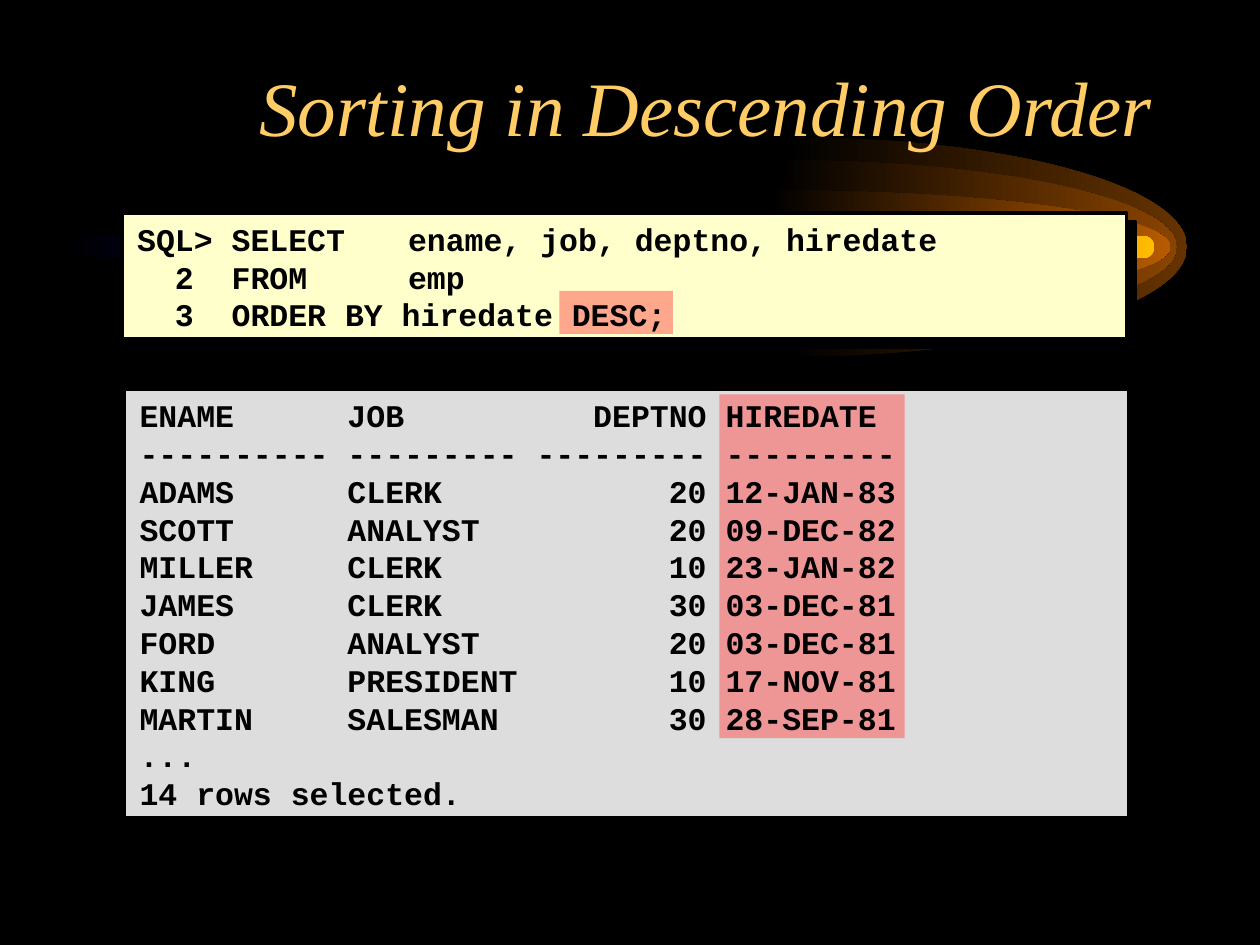
from dataclasses import dataclass

from lxml.etree import SubElement
from pptx import Presentation
from pptx.dml.color import RGBColor as Rgb
from pptx.enum.shapes import MSO_SHAPE as Shape
from pptx.enum.text import MSO_ANCHOR as Anchor, PP_ALIGN as Align
from pptx.oxml.ns import qn
from pptx.util import Inches, Pt


@dataclass(frozen=True)
class Theme:
    """Colours, fonts and type sizes of the slide."""
    black: str = "000000"
    title: str = "FFCC66"
    query: str = "FFFFCC"
    result: str = "DDDDDD"
    highlight: str = "FF5050"
    serif: str = "Times New Roman"
    mono: str = "Courier New"
    title_size: float = 44
    code_size: float = 18
    code_pitch: float = 21.6


THEME = Theme()
GLOWS = [(6.29, 0.87, "663300"), (6.21, 0.69, "894400"), (6.16, 0.45, "B75B00")]
COMET = [(0, "000000"), (20, "000040"), (50, "400040"),
         (75, "8F0040"), (90, "F27300"), (100, "FFBF00")]
QUERY = ["SQL> SELECT  \t ename, job, deptno, hiredate",
         "  2  FROM    \t emp",
         "  3  ORDER BY hiredate DESC;"]
HEADER = "ENAME      JOB          DEPTNO HIREDATE"
RULE = "---------- --------- --------- ---------"
ROWS = [("ADAMS", "CLERK", 20, "12-JAN-83"),
        ("SCOTT", "ANALYST", 20, "09-DEC-82"),
        ("MILLER", "CLERK", 10, "23-JAN-82"),
        ("JAMES", "CLERK", 30, "03-DEC-81"),
        ("FORD", "ANALYST", 20, "03-DEC-81"),
        ("KING", "PRESIDENT", 10, "17-NOV-81"),
        ("MARTIN", "SALESMAN", 30, "28-SEP-81")]


def add_span(para, text, *, font, size, color, bold=False, italic=False, shadow=False):
    """Add formatted text to a paragraph."""
    span = para.add_run()
    span.text = text
    span.font.size = Pt(size)
    span.font.bold, span.font.italic = bold, italic
    span.font.color.rgb = Rgb.from_string(color)
    if shadow:
        add_shadow(SubElement(span.font._element, qn("a:effectLst")), 3)
    span.font.name = font


def add_shadow(effects, distance):
    """Add a black diagonal shadow to an effect list."""
    shadow = SubElement(effects, qn("a:outerShdw"), dist=str(Pt(distance)),
                        dir="2700000", algn="ctr", rotWithShape="0")
    SubElement(shadow, qn("a:srgbClr"), val=THEME.black)


def bend(line, start, leaves_sideways):
    """Turn a path line into a quarter ellipse and return its end."""
    end = tuple(int(line[0].get(axis)) for axis in "xy")
    across, down = end[0] - start[0], end[1] - start[1]
    near, far = ((0.55, 0), (1, 0.45)) if leaves_sideways else ((0, 0.55), (0.45, 1))
    for share_x, share_y in (far, near):
        point = line.makeelement(qn("a:pt"), x=str(round(start[0] + share_x * across)),
                                 y=str(round(start[1] + share_y * down)))
        line.insert(0, point)
    curve = line.makeelement(qn("a:cubicBezTo"))
    curve.extend(list(line))
    line.getparent().replace(line, curve)
    return end


class SlideBuilder:
    """Draw styled elements on the current slide."""

    def __init__(self, slide, theme):
        """Keep the slide and paint its background."""
        self.slide, self.theme = slide, theme
        background = slide.background.fill
        background.solid()
        background.fore_color.rgb = Rgb.from_string(theme.black)

    def gradient(self, shape, stops):
        """Fill a shape with a left-to-right gradient and no outline."""
        shape.fill.gradient()
        shape.fill.gradient_angle = 0
        stop_list = shape._element.spPr.find(".//" + qn("a:gsLst"))
        for stop in list(stop_list):
            stop_list.remove(stop)
        for place, color in stops:
            stop = SubElement(stop_list, qn("a:gs"), pos=str(place * 1000))
            SubElement(stop, qn("a:srgbClr"), val=color)
        shape.line.fill.background()
        shape.shadow.inherit = False

    def glow(self, left, radius, color, reach=3.13, middle=1.96):
        """Draw the right half of an ellipse fading in from black."""
        corners = [(left, middle - radius), (left + reach, middle),
                   (left - 0.05, middle + radius), (left, middle)]
        points = [(Inches(x), Inches(y)) for x, y in corners]
        outline = self.slide.shapes.build_freeform(*points[0])
        outline.add_line_segments(points[1:], close=True)
        shape = outline.convert_to_shape()
        path = shape._element.spPr.find(".//" + qn("a:pathLst"))[0]
        start = tuple(int(path[0][0].get(axis)) for axis in "xy")
        tip = bend(path[1], start, True)
        bend(path[2], tip, False)
        self.gradient(shape, [(0, self.theme.black), (100, color)])

    def comet(self, left, top, width, height):
        """Draw the rounded streak that ends in a bright tip."""
        streak = self.slide.shapes.add_shape(
            Shape.ROUNDED_RECTANGLE, *map(Inches, (left, top, width, height)))
        streak.adjustments[0] = 0.5
        self.gradient(streak, COMET)

    def rectangle(self, left, top, width, height, color):
        """Draw a plain filled rectangle without outline or shadow."""
        box = self.slide.shapes.add_shape(
            Shape.RECTANGLE, *map(Inches, (left, top, width, height)))
        box.fill.solid()
        box.fill.fore_color.rgb = Rgb.from_string(color)
        box.line.fill.background()
        box.shadow.inherit = False
        return box

    def panel(self, left, top, width, height, color):
        """Draw an outlined code panel with a hard shadow."""
        box = self.rectangle(left, top, width, height, color)
        box.line.color.rgb = Rgb.from_string(self.theme.black)
        box.line.width = Pt(2)
        add_shadow(box._element.spPr.find(qn("a:effectLst")), 7.1)

    def highlight(self, left, top, width, height):
        """Draw a half-transparent marker."""
        box = self.rectangle(left, top, width, height, self.theme.highlight)
        color = box._element.spPr.find(qn("a:solidFill"))[0]
        SubElement(color, qn("a:alpha"), val="50000")

    def text_frame(self, left, top, width, height, anchor):
        """Add a wrapping text box and return its frame."""
        box = self.slide.shapes.add_textbox(*map(Inches, (left, top, width, height)))
        frame = box.text_frame
        frame.word_wrap = True
        frame.vertical_anchor = anchor
        return frame

    def title(self, text, left, top, width, height):
        """Write the right-aligned slide title."""
        para = self.text_frame(left, top, width, height, Anchor.TOP).paragraphs[0]
        para.alignment = Align.RIGHT
        add_span(para, text, font=self.theme.serif, size=self.theme.title_size,
                 color=self.theme.title, italic=True, shadow=True)

    def code(self, lines, left, top, width, height):
        """Write monospaced lines with one tab stop."""
        frame = self.text_frame(left, top, width, height, Anchor.MIDDLE)
        for index, line in enumerate(lines):
            para = frame.add_paragraph() if index else frame.paragraphs[0]
            para.line_spacing = Pt(self.theme.code_pitch)
            tabs = SubElement(para._p.get_or_add_pPr(), qn("a:tabLst"))
            SubElement(tabs, qn("a:tab"), pos=str(Inches(1.31)), algn="l")
            add_span(para, line, font=self.theme.mono, size=self.theme.code_size,
                     color=self.theme.black, bold=True)


def main():
    """Build and save the slide."""
    deck = Presentation()
    deck.slide_width, deck.slide_height = Inches(10), Inches(7.5)
    page = SlideBuilder(deck.slides.add_slide(deck.slide_layouts[6]), THEME)
    for left, radius, color in GLOWS:
        page.glow(left, radius, color)
    page.comet(0.5, 1.87, 8.66, 0.18)
    page.panel(0.97, 1.69, 7.97, 1, THEME.query)
    page.panel(0.99, 3.09, 7.97, 3.4, THEME.result)
    page.title("Sorting in Descending Order", 0.75, 0.42, 8.5, 1.25)
    page.highlight(4.44, 2.31, 0.9, 0.34)
    page.highlight(5.71, 3.13, 1.47, 2.73)
    page.code(QUERY, 0.99, 1.68, 8, 1.03)
    rows = [f"{name:<11}{job:<10}{department:>9} {hired}"
            for name, job, department, hired in ROWS]
    page.code([HEADER, RULE, *rows, "...", "14 rows selected."], 1.01, 3.08, 8, 3.43)
    deck.save("out.pptx")


if __name__ == "__main__":
    main()
